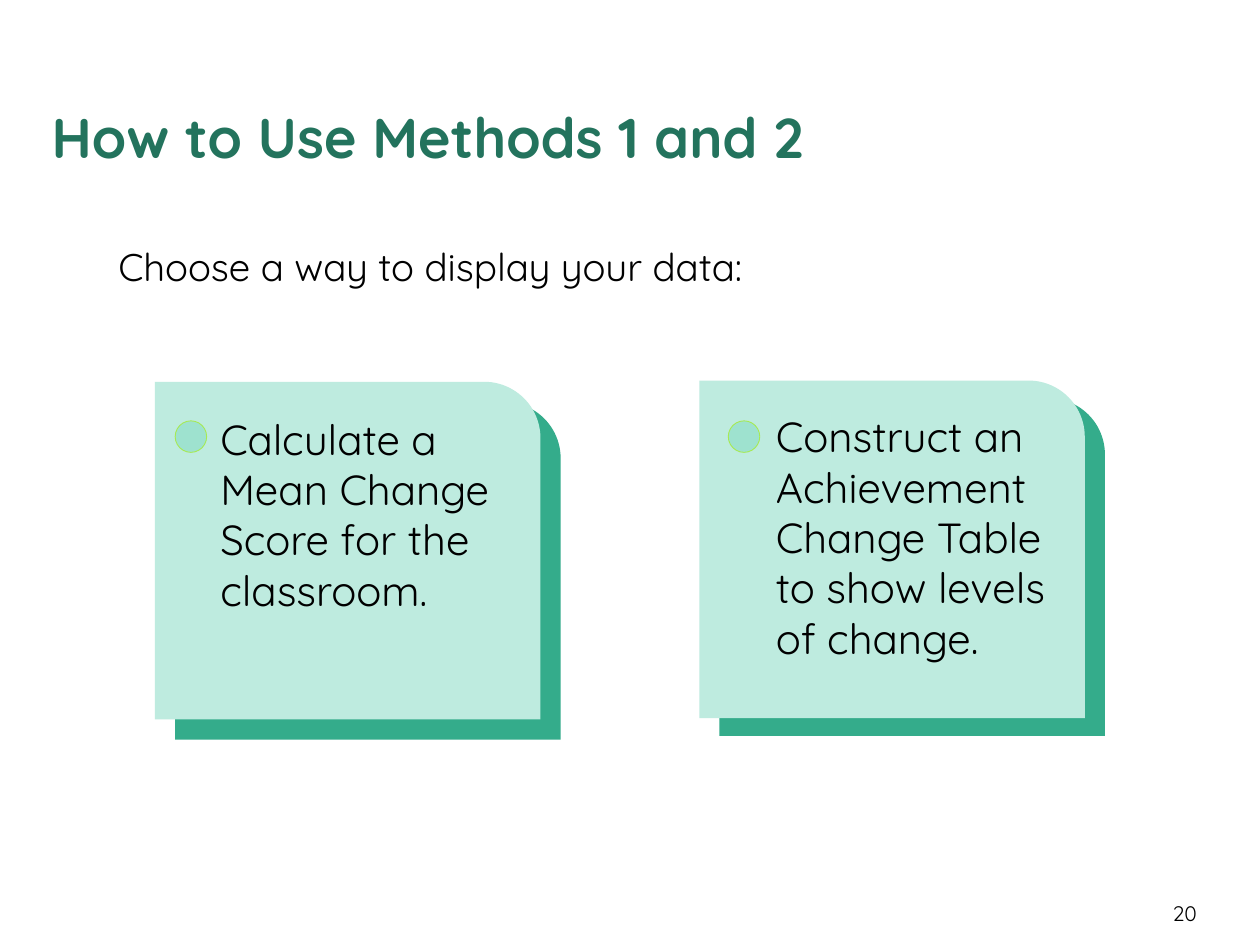
import pptx
import pptx.util
import pptx.dml.color
import pptx.enum.shapes
import pptx.enum.text

Inches = pptx.util.Inches
Shapes = pptx.enum.shapes.MSO_SHAPE
Align = pptx.enum.text.PP_ALIGN
Anchor = pptx.enum.text.MSO_ANCHOR

FONT = "Quicksand"
CARD_WIDTH, CARD_HEIGHT = 3.06, 2.68
DOT_TOP, DOT_SIZE = 3.34, 0.25


def color(hex_string):
    return pptx.dml.color.RGBColor.from_string(hex_string)


def write_text(shape, lines, size=24, hex_color="000000", bold=False,
               align=Align.LEFT, anchor=Anchor.TOP, insets=(0.1, 0.05, 0.1, 0.05)):
    """Fill a shape with one paragraph per line; insets are left, top, right, bottom."""
    frame = shape.text_frame
    frame.word_wrap = True
    frame.auto_size = pptx.enum.text.MSO_AUTO_SIZE.NONE
    frame.vertical_anchor = anchor
    frame.margin_left, frame.margin_top, frame.margin_right, frame.margin_bottom = map(Inches, insets)
    frame.text = "\n".join(lines)
    for paragraph in frame.paragraphs:
        paragraph.alignment = align
        font = paragraph.font
        font.name, font.size, font.bold = FONT, pptx.util.Pt(size), bold
        font.color.rgb = color(hex_color)


def add_text(slide, box, lines, **text_format):
    shape = slide.shapes.add_textbox(*map(Inches, box))
    write_text(shape, lines, **text_format)


def add_filled_shape(slide, kind, box, fill, line=None):
    shape = slide.shapes.add_shape(kind, *map(Inches, box))
    shape.shadow.inherit = False
    shape.fill.solid()
    shape.fill.fore_color.rgb = color(fill)
    if line:
        shape.line.color.rgb = color(line)
        shape.line.width = pptx.util.Pt(0.5)
    else:
        shape.line.fill.background()


def add_title(slide, box, text):
    title = slide.shapes.title
    title.left, title.top, title.width, title.height = map(Inches, box)
    write_text(title, [text], size=32, hex_color="23735D", bold=True,
               anchor=Anchor.BOTTOM, insets=(0, 0.05, 0, 0))


def add_card(slide, left, top, backing_drop, dot_left, text_box, lines):
    # Dark backing, offset right and down, then the light front
    for offset, drop, fill in ((0.16, backing_drop, "34AC8B"), (0, 0, "BEEBDF")):
        box = (left + offset, top + drop, CARD_WIDTH, CARD_HEIGHT)
        add_filled_shape(slide, Shapes.ROUND_1_RECTANGLE, box, fill)
    add_text(slide, text_box, lines)
    # Round marker beside the text
    add_filled_shape(slide, Shapes.OVAL, (dot_left, DOT_TOP, DOT_SIZE, DOT_SIZE),
                     "9EE2CF", line="A7EA52")


def main():
    presentation = pptx.Presentation()
    presentation.slide_width, presentation.slide_height = Inches(10), Inches(7.5)
    slide = presentation.slides.add_slide(presentation.slide_layouts[5])

    # Heading and lead-in
    add_title(slide, (0.41, 0.1, 9, 1.25), "How to Use Methods 1 and 2")
    add_text(slide, (0.84, 1.88, 7.59, 0.47), ["Choose a way to display your data:"], size=22)

    # Two method cards
    add_card(slide, 1.23, 3.03, 0.16, 1.39, (1.65, 3.23, 2.8, 1.72),
             ["Calculate a Mean Change Score for the classroom."])
    add_card(slide, 5.55, 3.02, 0.14, 5.78, (6.06, 3.21, 2.58, 2.12),
             ["Construct an Achievement Change Table", "to show levels", "of change."])

    # Page number
    add_text(slide, (8.67, 6.95, 0.83, 0.4), ["20"], size=12, align=Align.RIGHT,
             anchor=Anchor.BOTTOM, insets=(0, 0, 0, 0))

    presentation.save("out.pptx")


if __name__ == "__main__":
    main()
